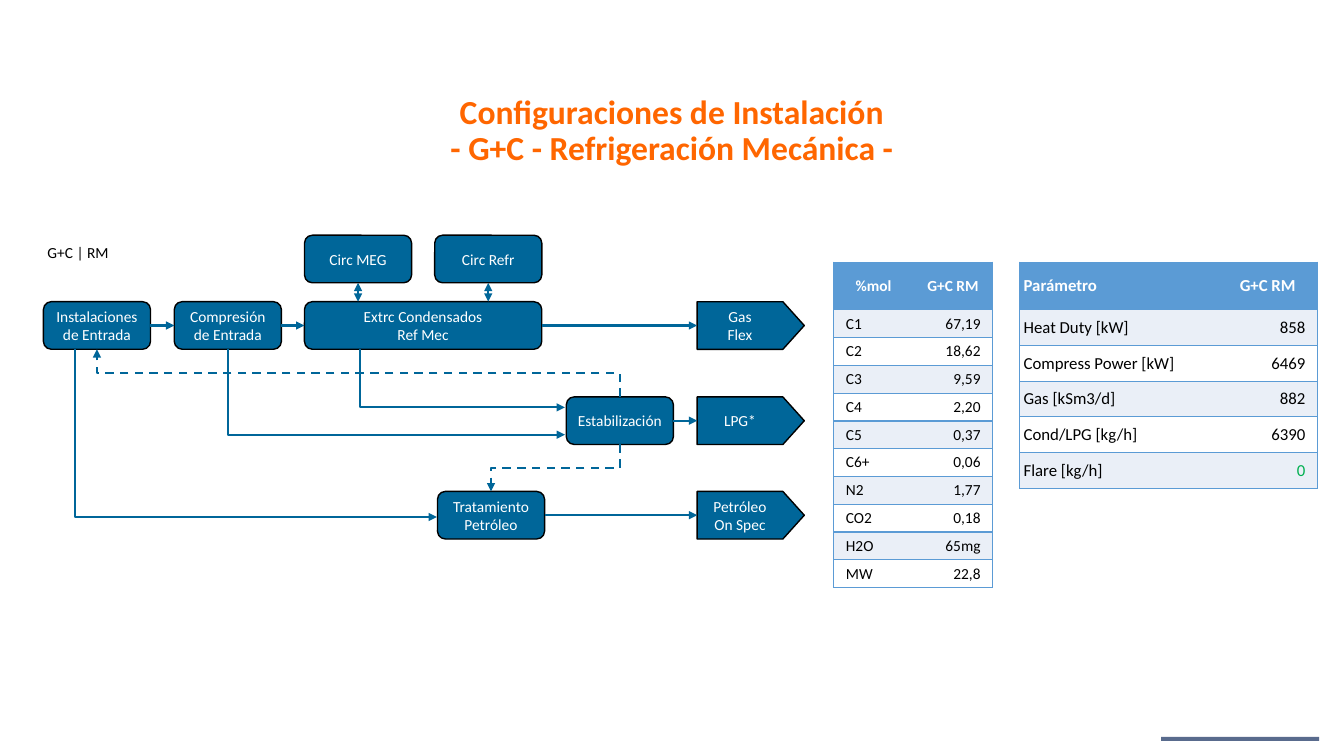
"""Build the slide with the G+C mechanical refrigeration layout."""
from lxml import etree
from pptx import Presentation, util as u
from pptx.dml import color
from pptx.enum import dml, shapes, text
from pptx.oxml import ns

FONT = "Calibri"
BLUE, BORDER, BAND = "006699", "5B9BD5", "EAEFF7"
WHITE, BLACK, GREEN = "FFFFFF", "000000", "00B050"
BOX_WIDTH, BOX_HEIGHT = 76.5, 34
UPPER, MAIN, MIDDLE, LOWER = 168, 215.5, 283.5, 351
NO_TABLE_STYLE = "{2D5ABB26-0587-4C30-8999-92F81FD0307C}"
PAD, WIDE = 2.88, 8.64


def rgb(value):
    """Turn a hex string into a colour."""
    return color.RGBColor.from_string(value)


def add_element(parent, tag, **attributes):
    """Append a drawing element to a parent element."""
    return etree.SubElement(parent, ns.qn(tag), attributes)


def format_text(frame, size, ink, align, bold=False):
    """Give every paragraph of a frame the same format."""
    for para in frame.paragraphs:
        para.alignment = align
        for span in para.runs:
            span.font.name = FONT
            span.font.size = u.Pt(size)
            span.font.bold = bold
            span.font.color.rgb = rgb(ink)


def set_margins(target, left, top, right, bottom):
    """Set the four text margins of a frame or cell."""
    target.margin_left, target.margin_top = u.Pt(left), u.Pt(top)
    target.margin_right, target.margin_bottom = u.Pt(right), u.Pt(bottom)


def add_title(page, words):
    """Place and format the title."""
    title = page.shapes.title
    title.left, title.top = u.Pt(54.7), u.Pt(65.5)
    title.width, title.height = u.Pt(850.3), u.Pt(57)
    frame = title.text_frame
    frame.text = words
    frame.word_wrap = True
    frame.auto_size = text.MSO_AUTO_SIZE.NONE
    frame.vertical_anchor = text.MSO_ANCHOR.MIDDLE
    set_margins(frame, 5.76, PAD, 5.76, PAD)
    format_text(frame, 24, "FF6600", text.PP_ALIGN.CENTER, bold=True)
    frame.paragraphs[0].line_spacing = 0.9


def add_footer_bar(page):
    """Draw the translucent bar at the foot of the slide."""
    bar = page.shapes.add_shape(shapes.MSO_SHAPE.RECTANGLE, u.Pt(829.4), u.Pt(526.4), u.Pt(113), u.Pt(2.9))
    bar.shadow.inherit = False
    bar.fill.solid()
    bar.fill.fore_color.rgb = rgb("001C50")
    add_element(bar.fill._xPr.find(".//" + ns.qn("a:srgbClr")), "a:alpha", val="65000")
    bar.line.fill.background()


def add_block(page, kind, words, left, top, width, height):
    """Draw a filled block with centred text."""
    box = page.shapes.add_shape(kind, u.Pt(left), u.Pt(top), u.Pt(width), u.Pt(height))
    box.shadow.inherit = False
    box.fill.solid()
    box.fill.fore_color.rgb = rgb(BLUE)
    box.line.color.rgb = rgb(BLACK)
    box.line.width = u.Pt(1)
    frame = box.text_frame
    frame.text = words
    frame.word_wrap = True
    frame.vertical_anchor = text.MSO_ANCHOR.MIDDLE
    set_margins(frame, PAD, PAD, PAD, PAD)
    format_text(frame, 11, WHITE, text.PP_ALIGN.CENTER)
    return box


def add_process(page, words, left, top, width=BOX_WIDTH):
    """Draw a process step."""
    return add_block(page, shapes.MSO_SHAPE.FLOWCHART_ALTERNATE_PROCESS, words, left, top, width, BOX_HEIGHT)


def add_product(page, words, top):
    """Draw a product pointing right, with upright text."""
    shift = (BOX_WIDTH - BOX_HEIGHT) / 2
    box = add_block(page, shapes.MSO_SHAPE.FLOWCHART_OFFPAGE_CONNECTOR, words,
                    498 + shift, top - shift, BOX_HEIGHT, BOX_WIDTH)
    box.rotation = 270
    box.text_frame._txBody.bodyPr.set("vert", "vert")


def format_connector(line, dashed=False, both=False):
    """Style a connector and add its arrowheads."""
    line.line.color.rgb = rgb(BLUE)
    line.line.width = u.Pt(1.5)
    if dashed:
        line.line.dash_style = dml.MSO_LINE.DASH
    stroke = line.line._get_or_add_ln()
    if both:
        add_element(stroke, "a:headEnd", type="triangle")
    add_element(stroke, "a:tailEnd", type="triangle")
    add_element(line._element.spPr, "a:effectLst")


def add_arrow(page, start, end, source, source_side, target=None, both=False):
    """Draw a straight arrow joined to its source and perhaps its target."""
    line = page.shapes.add_connector(shapes.MSO_CONNECTOR.STRAIGHT, *map(u.Pt, start + end))
    line.begin_connect(source, source_side)
    if target is not None:
        line.end_connect(target, 1)
    format_connector(line, both=both)


def add_elbow(page, start, end, preset="bentConnector2", dashed=False):
    """Draw a bent arrow that leaves its start vertically."""
    across, down = end[0] - start[0], end[1] - start[1]
    width, height = abs(down), abs(across)
    left = (start[0] + end[0] - width) / 2
    top = (start[1] + end[1] - height) / 2
    line = page.shapes.add_connector(shapes.MSO_CONNECTOR.ELBOW, u.Pt(left), u.Pt(top),
                                     u.Pt(left + width), u.Pt(top + height))
    frame = line._element.spPr.find(ns.qn("a:xfrm"))
    quarter = 90 if across < 0 < down else 270
    frame.set("rot", str(quarter * 60000))
    if across > 0 and down > 0:
        frame.set("flipH", "1")
    if across < 0 and down < 0:
        frame.set("flipV", "1")
    line._element.spPr.find(ns.qn("a:prstGeom")).set("prst", preset)
    format_connector(line, dashed)


def add_borders(cell, sides):
    """Draw the named borders of a cell."""
    for side in sides:
        edge = add_element(cell._tc.get_or_add_tcPr(), "a:ln" + side, w=str(u.Pt(1)))
        add_element(add_element(edge, "a:solidFill"), "a:srgbClr", val=BORDER)


def fill_cell(cell, words, fill, size, ink, align, bold, pads):
    """Fill and format one cell."""
    cell.fill.solid()
    cell.fill.fore_color.rgb = rgb(fill)
    cell.vertical_anchor = text.MSO_ANCHOR.MIDDLE
    set_margins(cell, pads[0], PAD, pads[1], PAD)
    cell.text_frame.text = words
    format_text(cell.text_frame, size, ink, align, bold)


def add_plain_table(page, left, top, widths, heights):
    """Add a table without a banded style."""
    table = page.shapes.add_table(len(heights), len(widths), u.Pt(left), u.Pt(top),
                                  u.Pt(sum(widths)), u.Pt(sum(heights))).table
    table.first_row = table.horz_banding = False
    table._tbl.tblPr.find(ns.qn("a:tableStyleId")).text = NO_TABLE_STYLE
    for column, width in zip(table.columns, widths):
        column.width = u.Pt(width)
    for row, height in zip(table.rows, heights):
        row.height = u.Pt(height)
    return table


def add_data_table(page, left, widths, row_height, size, label_pad, header_align, rows):
    """Add a two-column table with a header and banded rows."""
    table = add_plain_table(page, left, 187.3, widths, [34] + [row_height] * (len(rows) - 1))
    for r, row in enumerate(rows):
        for c, words in enumerate(row):
            cell = table.cell(r, c)
            add_borders(cell, "RTB" if c else "LTB")
            if r == 0:
                align = text.PP_ALIGN.CENTER if c else header_align
                fill_cell(cell, words, BORDER, size, WHITE, align, True, (PAD, PAD))
            else:
                align = text.PP_ALIGN.RIGHT if c else text.PP_ALIGN.LEFT
                ink = GREEN if words == "0" else BLACK
                pads = (label_pad, WIDE if c else label_pad)
                fill_cell(cell, words, BAND if r % 2 else WHITE, size, ink, align, False, pads)


def add_diagram(page):
    """Draw the process blocks, the products and the flows."""
    inlet = add_process(page, "Instalaciones de Entrada", 31, MAIN)
    compression = add_process(page, "Compresión de Entrada", 124.5, MAIN)
    extraction = add_process(page, "Extrc Condensados\nRef Mec", 217.5, MAIN, 169.5)
    glycol = add_process(page, "Circ MEG", 217.5, UPPER)
    cooling = add_process(page, "Circ Refr", 310.5, UPPER)
    stabilizer = add_process(page, "Estabilización", 404.5, MIDDLE)
    treatment = add_process(page, "Tratamiento\nPetróleo", 312.5, LOWER)
    for words, top in (("Gas\nFlex", MAIN), ("LPG*", MIDDLE), ("Petróleo\nOn Spec", LOWER)):
        add_product(page, words, top)
    add_arrow(page, (107.5, 232.5), (124.5, 232.5), inlet, 3, compression)
    add_arrow(page, (201, 232.5), (217.5, 232.5), compression, 3, extraction)
    for box, middle in ((glycol, 255.75), (cooling, 348.75)):
        add_arrow(page, (middle, 202), (middle, MAIN), box, 2, both=True)
    for box, right, y in ((extraction, 387, 232.5), (stabilizer, 481, 300.5), (treatment, 389, 368)):
        add_arrow(page, (right, y), (498, y), box, 3)
    add_elbow(page, (162.75, 249.5), (403.5, 310.5))
    add_elbow(page, (257, 249.5), (403.5, 291))
    add_elbow(page, (53.5, 249.5), (312, 369.3))
    add_elbow(page, (442.75, MIDDLE), (69.25, 249.5), "bentConnector3", dashed=True)
    add_elbow(page, (442.75, 317.5), (350.75, LOWER), "bentConnector3", dashed=True)


def main():
    """Build and save the deck."""
    deck = Presentation()
    deck.slide_width, deck.slide_height = u.Pt(960), u.Pt(540)
    page = deck.slides.add_slide(deck.slide_layouts[5])
    add_footer_bar(page)
    add_title(page, "Configuraciones de Instalación\v- G+C - Refrigeración Mecánica -")
    label = add_plain_table(page, 31, 168.5, [170], [25])
    fill_cell(label.cell(0, 0), "G+C | RM", WHITE, 11, BLACK, text.PP_ALIGN.LEFT, False, (PAD, PAD))
    add_diagram(page)
    add_data_table(page, 595.6, [56.75, 56.75], 19.85, 11, WIDE, text.PP_ALIGN.CENTER, [
        ("%mol", "G+C RM"), ("C1", "67,19"), ("C2", "18,62"), ("C3", "9,59"), ("C4", "2,20"), ("C5", "0,37"),
        ("C6+", "0,06"), ("N2", "1,77"), ("CO2", "0,18"), ("H2O", "65mg"), ("MW", "22,8")])
    add_data_table(page, 728.3, [141.8, 70.9], 25.5, 12, PAD, text.PP_ALIGN.LEFT, [
        ("Parámetro", "G+C RM"), ("Heat Duty [kW]", "858"), ("Compress Power [kW]", "6469"),
        ("Gas [kSm3/d]", "882"), ("Cond/LPG [kg/h]", "6390"), ("Flare [kg/h]", "0")])
    deck.save("out.pptx")


if __name__ == "__main__":
    main()
